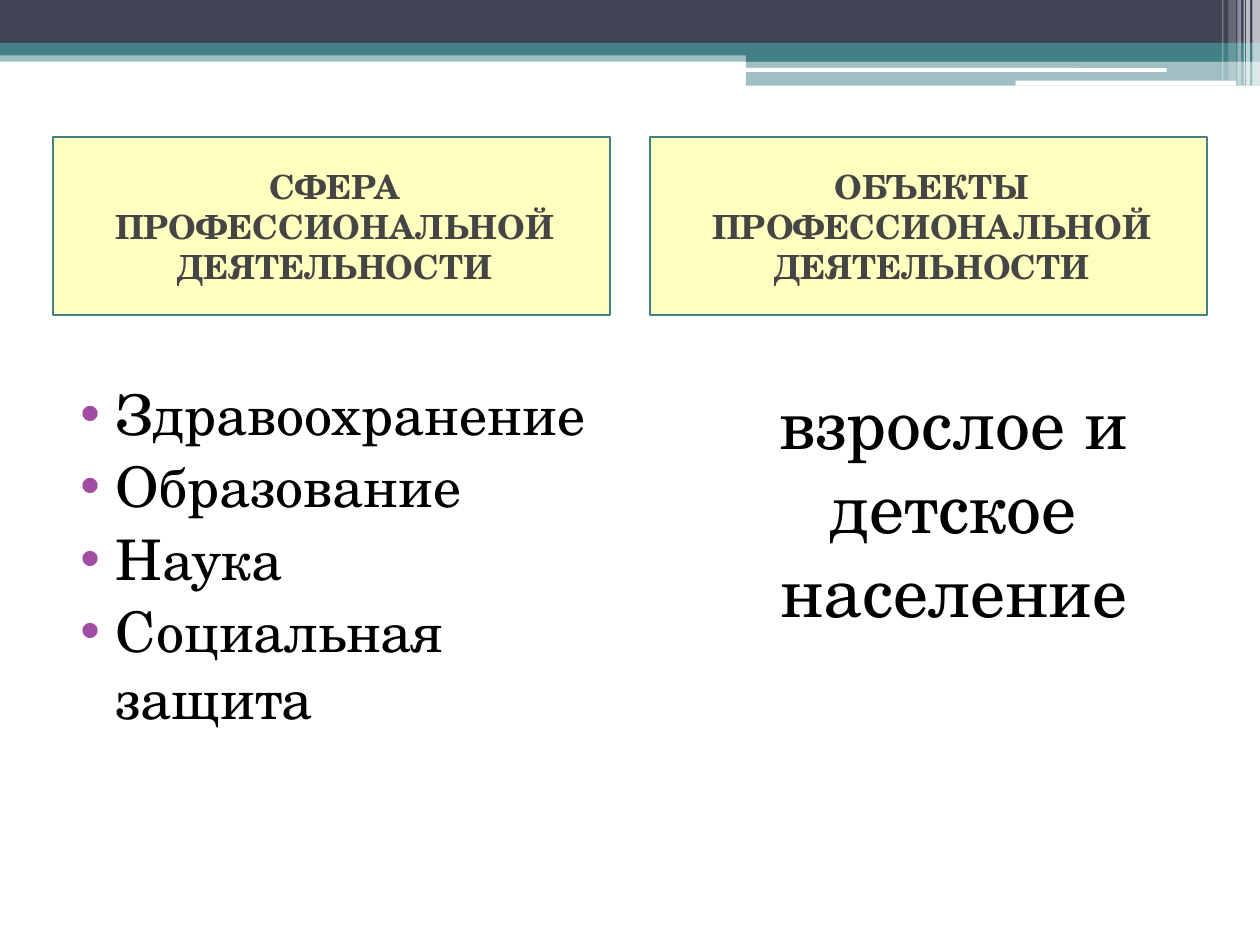
from typing import NamedTuple

from pptx import Presentation
from pptx.dml.color import RGBColor
from pptx.enum.shapes import MSO_SHAPE
from pptx.enum.text import MSO_ANCHOR, PP_ALIGN
from pptx.oxml.ns import qn
from pptx.util import Inches, Pt
from lxml.etree import SubElement

HUES = {
    "navy": "424456", "teal": "438086", "white": "FFFFFF", "yellow": "FFFF00",
    "gray": "454545", "black": "000000", "purple": "A04DA3",
}
FONT = "TeX Gyre Schola"


class Box(NamedTuple):
    left: float
    top: float
    width: float
    height: float


class Band(NamedTuple):
    box: Box
    hue: str
    alpha: int = 100
    round: bool = False


class Style(NamedTuple):
    size: int
    hue: str
    bold: bool = False
    center: bool = False
    margin: float = 0
    indent: float = 0
    bullet: bool = False


class Column(NamedTuple):
    left: float
    title: str
    items: list[str]
    style: Style
    height: float


HEAD = Style(19, "gray", bold=True, center=True, margin=0.05)
LIST = Style(32, "black", margin=0.4, indent=-0.28, bullet=True)
NOTE = Style(40, "black", center=True, margin=0.4)

BANDS = [
    Band(Box(0, 0.4, 10, 0.09), "teal", 50),
    Band(Box(0, 0, 10, 0.34), "navy"),
    Band(Box(0, 0.34, 10, 0.1), "teal"),
    Band(Box(5.92, 0.39, 4.08, 0.1), "teal"),
    Band(Box(5.92, 0.48, 4.08, 0.2), "teal", 50),
    Band(Box(5.91, 0.54, 3.35, 0.03), "white", round=True),
    Band(Box(8.06, 0.64, 1.75, 0.04), "white", round=True),
    Band(Box(9.94, 0, 0.06, 0.68), "white", 65),
    Band(Box(9.89, 0, 0.03, 0.68), "white", 65),
    Band(Box(9.87, 0, 0.01, 0.68), "white", 60),
    Band(Box(9.82, 0, 0.03, 0.68), "white", 40),
    Band(Box(9.75, 0, 0.06, 0.64), "white", 20),
    Band(Box(9.7, 0, 0.01, 0.64), "white", 30),
]

COLUMNS = [
    Column(0.42, "СФЕРА ПРОФЕССИОНАЛЬНОЙ ДЕЯТЕЛЬНОСТИ",
           ["Здравоохранение", "Образование", "Наука", "Социальная защита"],
           LIST, 3.6),
    Column(5.16, "ОБЪЕКТЫ ПРОФЕССИОНАЛЬНОЙ ДЕЯТЕЛЬНОСТИ",
           ["взрослое и детское население"], NOTE, 3.44),
]


def color(name: str) -> RGBColor:
    return RGBColor.from_string(HUES[name])


def draw_band(slide, band: Band):
    kind = MSO_SHAPE.ROUNDED_RECTANGLE if band.round else MSO_SHAPE.RECTANGLE
    shape = slide.shapes.add_shape(kind, *map(Inches, band.box))
    shape.shadow.inherit = False
    shape.line.fill.background()
    shape.fill.solid()
    shape.fill.fore_color.rgb = color(band.hue)
    if band.alpha < 100:
        node = shape.fill._xPr.find(qn("a:solidFill"))[0]
        SubElement(node, qn("a:alpha"), val=str(band.alpha * 1000))
    return shape


def write(frame, items: list[str], style: Style) -> None:
    frame.word_wrap = True
    for i, item in enumerate(items):
        par = frame.paragraphs[0] if i == 0 else frame.add_paragraph()
        par.text = item
        par.alignment = PP_ALIGN.CENTER if style.center else PP_ALIGN.LEFT
        par.space_before = Pt(3)
        props = par._p.get_or_add_pPr()
        props.set("marL", str(Inches(style.margin)))
        props.set("indent", str(Inches(style.indent)))
        if style.bullet:
            tint = SubElement(props, qn("a:buClr"))
            SubElement(tint, qn("a:srgbClr"), val=HUES["purple"])
            SubElement(props, qn("a:buFont"), typeface="Arial")
            SubElement(props, qn("a:buChar"), char="•")
        font = par.font
        font.name, font.size, font.bold = FONT, Pt(style.size), style.bold
        font.color.rgb = color(style.hue)


def draw_column(slide, col: Column) -> None:
    head = draw_band(slide, Band(Box(col.left, 1.09, 4.42, 1.41), "yellow", 25))
    head.line.color.rgb = color("teal")
    head.line.width = Pt(1)
    head.text_frame.vertical_anchor = MSO_ANCHOR.MIDDLE
    write(head.text_frame, [col.title], HEAD)
    area = Box(col.left, 2.96, 4.42, col.height)
    body = slide.shapes.add_textbox(*map(Inches, area))
    write(body.text_frame, col.items, col.style)


def main() -> None:
    """Build the slide on the field and objects of professional work."""
    deck = Presentation()
    deck.slide_width, deck.slide_height = Inches(10), Inches(7.5)
    slide = deck.slides.add_slide(deck.slide_layouts[6])
    for band in BANDS:
        draw_band(slide, band)
    for col in COLUMNS:
        draw_column(slide, col)
    deck.save("out.pptx")


if __name__ == "__main__":
    main()
